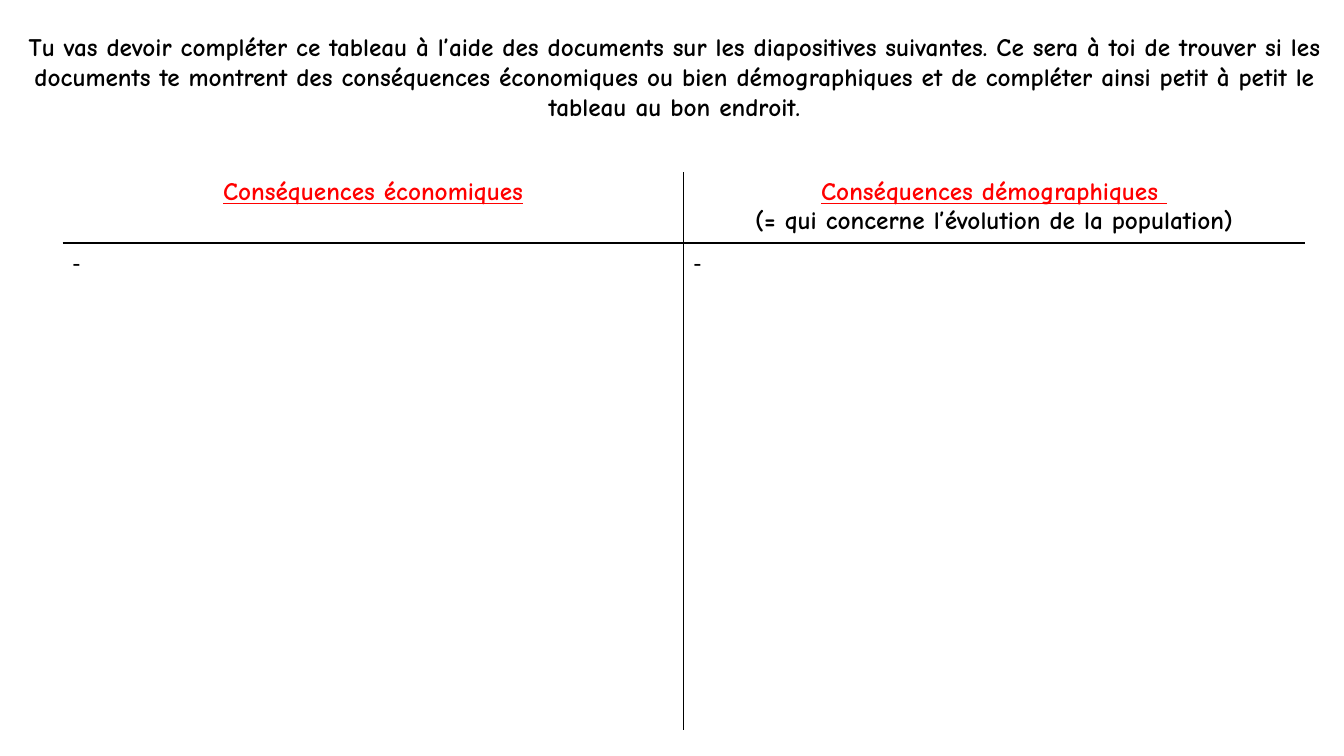
import pptx
import pptx.dml.color
import pptx.enum.text
import pptx.oxml
import pptx.oxml.ns
import pptx.util
from pptx.util import Inches

BLACK = pptx.dml.color.RGBColor(0x00, 0x00, 0x00)
RED = pptx.dml.color.RGBColor(0xFF, 0x00, 0x00)
HEADING_FONT = "Comic Neue"
BODY_FONT = "Calibri"
PLAIN_TABLE_STYLE = "{2D5ABB26-0587-4C30-8999-92F81FD0307C}"

INSTRUCTION = (
    "Tu vas devoir compléter ce tableau à l’aide des documents sur les diapositives "
    "suivantes. Ce sera à toi de trouver si les documents te montrent des conséquences "
    "économiques ou bien démographiques et de compléter ainsi petit à petit le tableau "
    "au bon endroit."
)
HEADINGS = [
    ["Conséquences économiques"],
    ["Conséquences démographiques ", "(= qui concerne l’évolution de la population)"],
]


def write_heading(para, text, color=BLACK, underline=False):
    para.text = text
    para.alignment = pptx.enum.text.PP_ALIGN.CENTER
    for span in para.runs:
        span.font.name = HEADING_FONT
        span.font.size = pptx.util.Pt(18)
        span.font.bold = True
        span.font.underline = underline
        span.font.color.rgb = color


def write_dash(para):
    para.text = "-"
    for span in para.runs:
        span.font.name = BODY_FONT
        span.font.size = pptx.util.Pt(18)
        span.font.color.rgb = BLACK


def draw_borders(cell, sides):
    """Draw thin black lines on the given sides, named L, R, T or B in that order."""
    properties = cell._tc.get_or_add_tcPr()
    for side in sides:
        properties.append(pptx.oxml.parse_xml(
            f'<a:ln{side} {pptx.oxml.ns.nsdecls("a")} w="{pptx.util.Pt(1)}">'
            f'<a:solidFill><a:srgbClr val="{BLACK}"/></a:solidFill></a:ln{side}>'
        ))


def add_instruction(page):
    box = page.shapes.add_textbox(Inches(0.18), Inches(0.26), Inches(13.02), Inches(1.26))
    box.text_frame.word_wrap = True
    write_heading(box.text_frame.paragraphs[0], INSTRUCTION)


def add_consequences_table(page):
    frame = page.shapes.add_table(
        2, 2, Inches(0.62), Inches(1.71), Inches(12.32), Inches(5.5))
    table = frame.table
    table.first_row = False
    table.horz_banding = False
    table._tbl.tblPr.find(pptx.oxml.ns.qn("a:tableStyleId")).text = PLAIN_TABLE_STYLE
    table.rows[0].height = Inches(0.67)
    table.rows[1].height = Inches(4.83)

    for column, lines in enumerate(HEADINGS):
        inner_side = "R" if column == 0 else "L"
        heading, answer = table.cell(0, column), table.cell(1, column)
        heading.text_frame.text = "\n".join(lines)
        for index, para in enumerate(heading.text_frame.paragraphs):
            is_title = index == 0
            write_heading(para, lines[index], RED if is_title else BLACK, is_title)
        write_dash(answer.text_frame.paragraphs[0])
        draw_borders(heading, [inner_side, "B"])
        draw_borders(answer, [inner_side, "T"])
        for cell in (heading, answer):
            cell.fill.background()


def main():
    deck = pptx.Presentation()
    deck.slide_width = Inches(13.33)
    deck.slide_height = Inches(7.5)
    page = deck.slides.add_slide(deck.slide_layouts.get_by_name("Blank"))
    add_instruction(page)
    add_consequences_table(page)
    deck.save("out.pptx")


if __name__ == "__main__":
    main()
